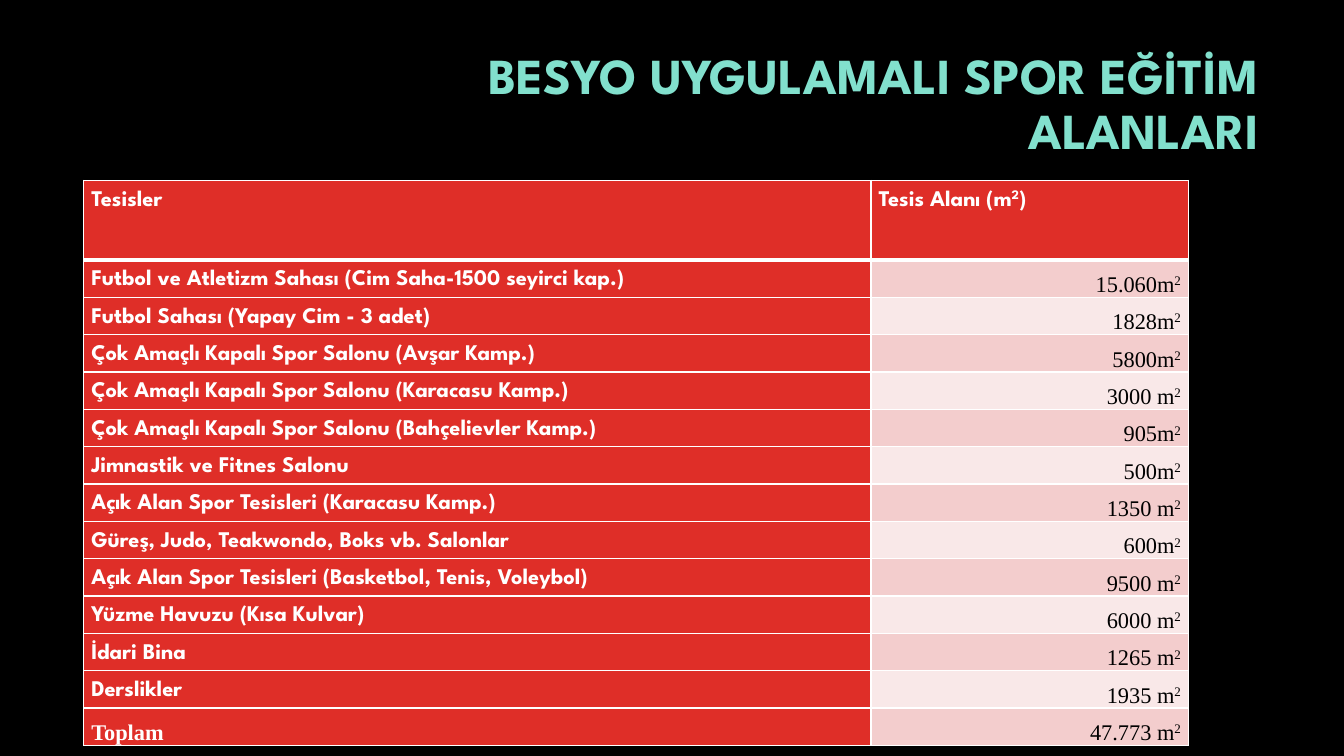
from dataclasses import dataclass

from lxml import etree
from pptx import Presentation
from pptx import util as u
from pptx.dml.color import RGBColor
from pptx.enum import text
from pptx.oxml.ns import qn


@dataclass(frozen=True)
class Theme:
    background: str = "000000"
    title: str = "82E0CD"
    red: str = "DF2E28"
    bands: tuple = ("F3CDCD", "F9E8E8")
    light: str = "FFFFFF"
    dark: str = "000000"
    heading_font: str = "League Spartan"
    number_font: str = "Times New Roman"
    title_size: int = 36
    table_size: int = 16
    thin: int = 1
    thick: int = 3


THEME = Theme()
TITLE = "BESYO UYGULAMALI SPOR EĞİTİM ALANLARI"
TOTAL = "Toplam"
FACILITIES = [
    ("Futbol ve Atletizm Sahası (Cim Saha-1500 seyirci kap.)", "15.060m"),
    ("Futbol Sahası (Yapay Cim - 3 adet)", "1828m"),
    ("Çok Amaçlı Kapalı Spor Salonu (Avşar Kamp.)", "5800m"),
    ("Çok Amaçlı Kapalı Spor Salonu (Karacasu Kamp.)", "3000 m"),
    ("Çok Amaçlı Kapalı Spor Salonu (Bahçelievler Kamp.)", "905m"),
    ("Jimnastik ve Fitnes Salonu", "500m"),
    ("Açık Alan Spor Tesisleri (Karacasu Kamp.)", "1350 m"),
    ("Güreş, Judo, Teakwondo, Boks vb. Salonlar", "600m"),
    ("Açık Alan Spor Tesisleri (Basketbol, Tenis, Voleybol)", "9500 m"),
    ("Yüzme Havuzu (Kısa Kulvar)", "6000 m"),
    ("İdari Bina", "1265 m"),
    ("Derslikler", "1935 m"),
    (TOTAL, "47.773 m"),
]


def add_span(para, words, font, size, color, bold=False, raised=False):
    span = para.add_run()
    span.text = words
    span.font.name = font
    span.font.size = u.Pt(size)
    span.font.bold = bold
    span.font.color.rgb = RGBColor.from_string(color)
    if raised:
        span.font._element.set("baseline", "30000")


def set_borders(cell, top, bottom):
    """Draw the four cell edges; they must precede the fill in the XML."""
    properties = cell._tc.get_or_add_tcPr()
    edges = {"a:lnL": THEME.thin, "a:lnR": THEME.thin, "a:lnT": top, "a:lnB": bottom}
    for place, (edge, width) in enumerate(edges.items()):
        line = etree.Element(qn(edge), w=str(u.Pt(width)))
        fill = etree.SubElement(line, qn("a:solidFill"))
        etree.SubElement(fill, qn("a:srgbClr"), val=THEME.light)
        properties.insert(place, line)


def fill_cell(cell, spans, fill, font, color, bold, align, indent=0):
    """Write (words, raised) spans into a filled cell."""
    cell.margin_left = cell.margin_right = u.Cm(0.19)
    cell.margin_top = cell.margin_bottom = 0
    cell.fill.solid()
    cell.fill.fore_color.rgb = RGBColor.from_string(fill)
    para = cell.text_frame.paragraphs[0]
    para.alignment = align
    para.line_spacing = 1.5
    if indent:
        para._p.get_or_add_pPr().set("marL", str(u.Cm(indent)))
    for words, raised in spans:
        add_span(para, words, font, THEME.table_size, color, bold, raised)


def fill_label(cell, spans, font=THEME.heading_font):
    fill_cell(cell, spans, THEME.red, font, THEME.light, True, text.PP_ALIGN.JUSTIFY)


def fill_area(cell, area, band):
    fill_cell(cell, [(area, False), ("2", True)], band, THEME.number_font,
              THEME.dark, False, text.PP_ALIGN.RIGHT, indent=0.74)


def format_title(box):
    box.left, box.top = u.Cm(8.05), u.Cm(2.13)
    box.width, box.height = u.Cm(23.93), u.Cm(2.44)
    frame = box.text_frame
    frame.word_wrap = True
    frame.auto_size = text.MSO_AUTO_SIZE.NONE
    frame.vertical_anchor = text.MSO_ANCHOR.MIDDLE
    frame.margin_bottom = u.Cm(1.5)
    para = frame.paragraphs[0]
    para.alignment = text.PP_ALIGN.RIGHT
    para.line_spacing = 0.9
    add_span(para, TITLE, THEME.heading_font, THEME.title_size, THEME.title, bold=True)


def add_facility_table(page):
    widths = (19.84, 8)
    header_height, row_height = 2, 0.87
    count = len(FACILITIES) + 1
    table = page.shapes.add_table(
        count, len(widths), u.Cm(2.11), u.Cm(4.55), u.Cm(sum(widths)),
        u.Cm(header_height + row_height * len(FACILITIES))).table
    for column, width in zip(table.columns, widths):
        column.width = u.Cm(width)
    for number, row in enumerate(table.rows):
        row.height = u.Cm(row_height if number else header_height)
        for cell in row.cells:
            set_borders(cell, THEME.thick if number == 1 else THEME.thin,
                        THEME.thin if number else THEME.thick)

    fill_label(table.cell(0, 0), [("Tesisler", False)])
    fill_label(table.cell(0, 1), [("Tesis Alanı (m", False), ("2", True), (")", False)])
    for index, (name, area) in enumerate(FACILITIES):
        font = THEME.number_font if name == TOTAL else THEME.heading_font
        fill_label(table.cell(index + 1, 0), [(name, False)], font)
        fill_area(table.cell(index + 1, 1), area, THEME.bands[index % 2])


def main():
    deck = Presentation()
    deck.slide_width, deck.slide_height = u.Cm(33.87), u.Cm(19.05)
    page = deck.slides.add_slide(deck.slide_layouts.get_by_name("Title Only"))
    page.background.fill.solid()
    page.background.fill.fore_color.rgb = RGBColor.from_string(THEME.background)
    format_title(page.shapes.title)
    add_facility_table(page)
    deck.save("out.pptx")


if __name__ == "__main__":
    main()
